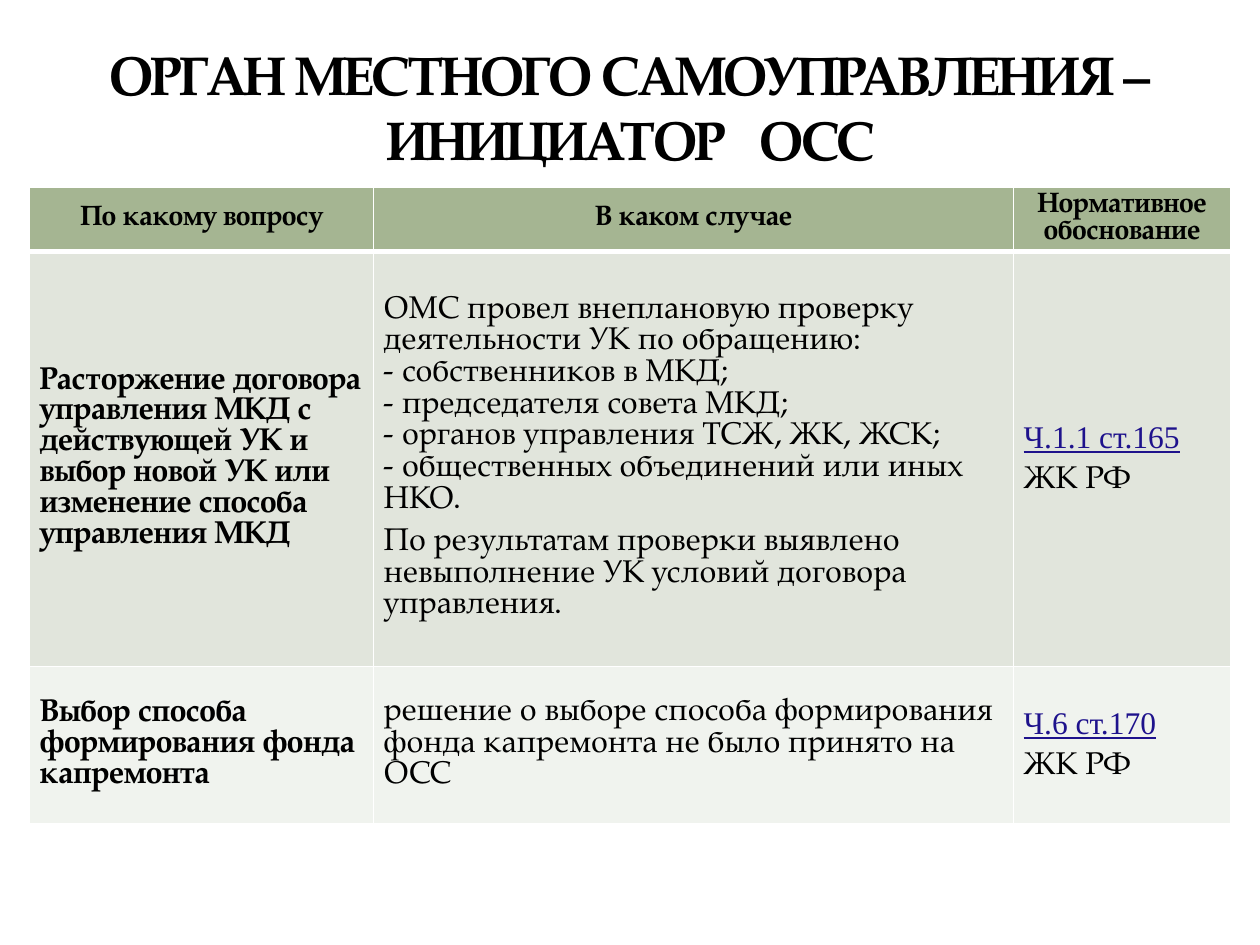
from lxml import etree
from pptx import Presentation
from pptx.dml.color import RGBColor
from pptx.enum.text import MSO_ANCHOR, PP_ALIGN
from pptx.oxml import parse_xml
from pptx.oxml.ns import qn
from pptx.util import Inches, Pt

NS = 'xmlns:a="http://schemas.openxmlformats.org/drawingml/2006/main"'
SIDES = ("L", "R", "T", "B")


def rgb(value):
    return RGBColor.from_string(value)


def line_xml(tag, color, width, alpha=100):
    """Solid line element for cell borders and text outlines."""
    return parse_xml(
        f'<a:{tag} {NS} w="{int(Pt(width))}"><a:solidFill><a:srgbClr val="{color}">'
        f'<a:alpha val="{alpha * 1000}"/></a:srgbClr></a:solidFill>'
        f'<a:prstDash val="solid"/></a:{tag}>')


class SlideBuilder:
    """Holds the style and the slide; lengths are units of a 100 x 75 grid."""

    FONT, LINK_FONT = "TeX Gyre Pagella", "Times New Roman"
    INK, LINK, BORDER, OUTLINE = "000000", "1E128C", "FFFFFF", "E0DDB1"

    def __init__(self, prs):
        self.unit = prs.slide_width / 100
        self.slide = prs.slides.add_slide(prs.slide_layouts[6])
        fill = self.slide.background.fill
        fill.solid()
        fill.fore_color.rgb = rgb("FFFFFF")

    def grid(self, *units):
        return [round(n * self.unit) for n in units]

    def run(self, paragraph, text, size, color=INK, **extra):
        run = paragraph.add_run()
        run.text = text
        style = {"name": self.FONT, "size": Pt(size), **extra}
        for key, value in style.items():
            setattr(run.font, key, value)
        run.font.color.rgb = rgb(color)
        return run

    def title(self, lines, box, size):
        frame = self.slide.shapes.add_textbox(*self.grid(*box)).text_frame
        frame.word_wrap = True
        frame.vertical_anchor = MSO_ANCHOR.BOTTOM
        paragraph = frame.paragraphs[0]
        paragraph.alignment = PP_ALIGN.CENTER
        for number, pieces in enumerate(lines):
            if number:
                paragraph.add_line_break()
            for text, spacing in pieces:
                props = self.run(paragraph, text, size, bold=True).font._element
                props.set("spc", str(spacing))
                props.insert(0, line_xml("ln", self.OUTLINE, 0.25, 25))
        for line_break in paragraph._p.findall(qn("a:br")):
            etree.SubElement(line_break, qn("a:rPr")).set("sz", str(size * 100))

    def cell(self, cell, paragraphs, fill, size, bold=False, centred=False, bottom=1):
        cell.fill.solid()
        cell.fill.fore_color.rgb = rgb(fill)
        cell.vertical_anchor = MSO_ANCHOR.MIDDLE
        cell.margin_left = cell.margin_right = Inches(0.08)
        cell.margin_top = cell.margin_bottom = Inches(0.04)
        frame = cell.text_frame
        for number, (text, after, linked) in enumerate(paragraphs):
            paragraph = frame.add_paragraph() if number else frame.paragraphs[0]
            paragraph.alignment = PP_ALIGN.CENTER if centred else PP_ALIGN.LEFT
            paragraph.space_after = Pt(after)
            paragraph.line_spacing = 1.0
            if linked:
                self.run(paragraph, text, size, self.LINK,
                         name=self.LINK_FONT, underline=True, bold=bold)
            else:
                self.run(paragraph, text, size, bold=bold)
        props = cell._tc.get_or_add_tcPr()
        for place, side in enumerate(SIDES):
            width = bottom if side == "B" else 1
            props.insert(place, line_xml(f"ln{side}", self.BORDER, width))

    def table(self, header, rows, fills, origin, widths, heights):
        table = self.slide.shapes.add_table(
            len(heights), len(widths),
            *self.grid(*origin, sum(widths), sum(heights))).table
        for column, width in zip(table.columns, self.grid(*widths)):
            column.width = width
        for row, height in zip(table.rows, self.grid(*heights)):
            row.height = height
        # Header row
        for col, text in enumerate(header):
            self.cell(table.cell(0, col), [(text, 6, False)], fills[0], 16,
                      bold=True, centred=True, bottom=3)
        # Body rows: question, case, legal ground
        for row, contents in enumerate(rows, start=1):
            for col, paragraphs in enumerate(contents):
                self.cell(table.cell(row, col), paragraphs, fills[row], 18,
                          bold=col == 0)


def plain(text, after=6):
    return text, after, False


def legal_ground(article):
    return [(article, 6, True), plain("ЖК РФ")]


HEADER = ["По какому вопросу", "В каком случае", "Нормативное обоснование"]
TERMINATION_CASE = [
    plain("ОМС провел внеплановую проверку деятельности УК по обращению:", 0),
    plain("- собственников в МКД;", 0),
    plain("- председателя совета МКД;", 0),
    plain("- органов управления ТСЖ, ЖК, ЖСК;", 0),
    plain("- общественных объединений или иных НКО."),
    plain("По результатам проверки выявлено невыполнение УК условий договора управления."),
]
ROWS = [
    [[plain("Расторжение договора управления МКД с действующей УК и выбор новой УК "
            "или изменение способа управления МКД")],
     TERMINATION_CASE,
     legal_ground("Ч.1.1 ст.165")],
    [[plain("Выбор способа формирования фонда капремонта")],
     [plain("решение о выборе способа формирования фонда капремонта не было принято на ОСС")],
     legal_ground("Ч.6 ст.170")],
]
# Each piece of the title has its letter spacing in hundredths of a point
TITLE = [
    [("ОРГАН МЕСТНОГО САМОУПРАВЛЕНИЯ –", -100)],
    [("ИНИЦИАТОР", -100), (" ", 1250), ("ОСС", -100)],
]


def main():
    prs = Presentation()
    prs.slide_width, prs.slide_height = Inches(10), Inches(7.5)
    builder = SlideBuilder(prs)
    builder.table(HEADER, ROWS, ["A5B592", "E1E5DC", "F0F3EE"],
                  origin=(2.35, 14.85), widths=(27.3, 50.8, 17.2),
                  heights=(5.1, 32.9, 12.5))
    builder.title(TITLE, box=(5, 1.7, 90, 12.4), size=31)
    prs.save("out.pptx")


if __name__ == "__main__":
    main()
